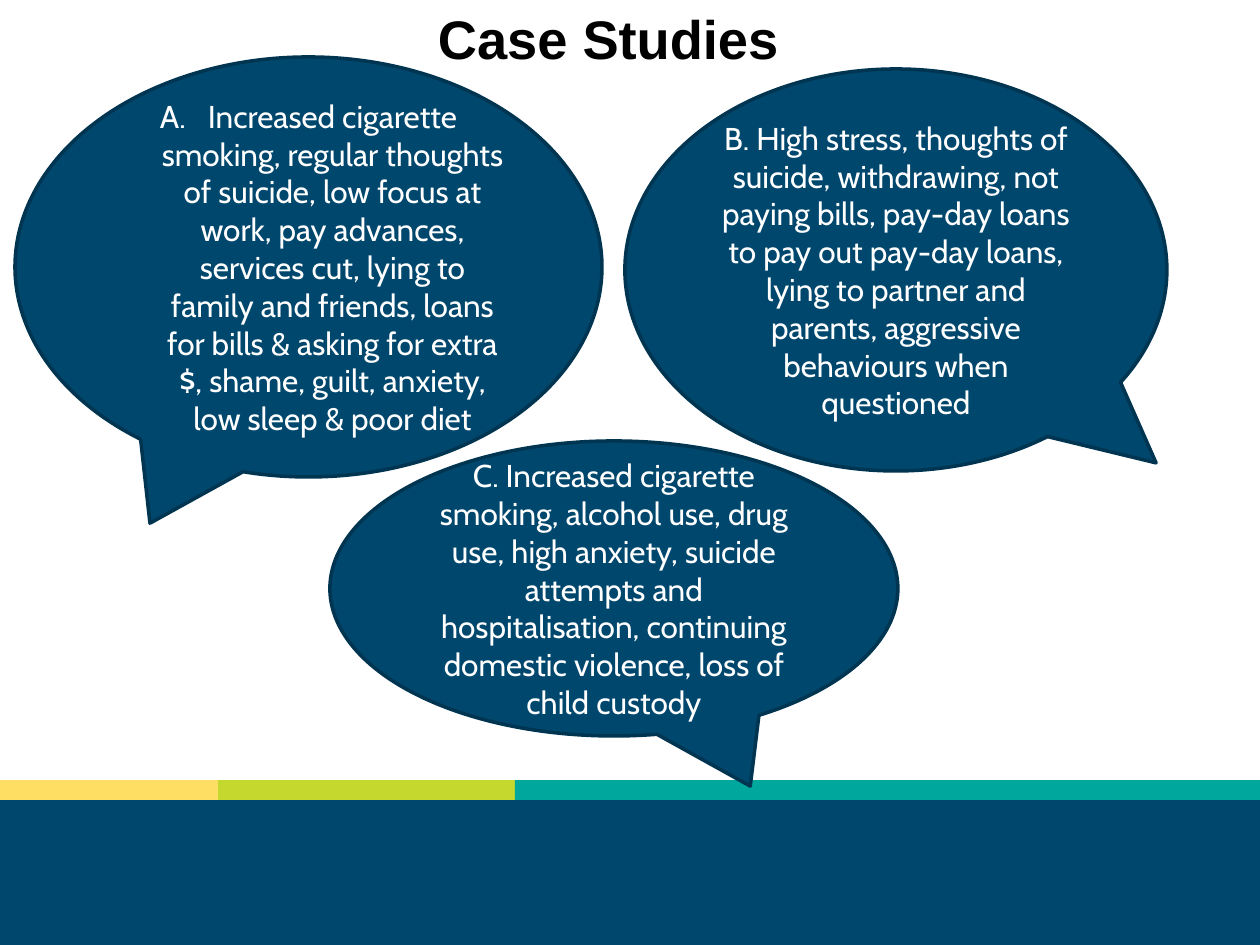
from dataclasses import dataclass

from lxml.etree import SubElement
from pptx import Presentation
from pptx.dml.color import RGBColor
from pptx.enum.shapes import MSO_SHAPE
from pptx.enum.text import MSO_ANCHOR, MSO_AUTO_SIZE, PP_ALIGN
from pptx.oxml.ns import qn
from pptx.util import Emu, Pt


@dataclass(frozen=True)
class Theme:
    navy: RGBColor = RGBColor.from_string("00476D")
    outline: RGBColor = RGBColor.from_string("003551")
    yellow: RGBColor = RGBColor.from_string("FFDF63")
    lime: RGBColor = RGBColor.from_string("C4D82E")
    teal: RGBColor = RGBColor.from_string("00A79D")
    white: RGBColor = RGBColor.from_string("FFFFFF")
    black: RGBColor = RGBColor.from_string("000000")
    title_font: str = "Arial"
    body_font: str = "Cabin"
    title_size: Pt = Pt(31)
    body_size: Pt = Pt(18)


theme = Theme()
PX_PER_INCH = 126
WIDTH, HEIGHT = 1260, 945


def px(length):
    return Emu(round(length * 914400 / PX_PER_INCH))


def add_filled(kind, left, top, width, height, color):
    shape = page.shapes.add_shape(kind, px(left), px(top), px(width), px(height))
    shape.shadow.inherit = False
    shape.fill.solid()
    shape.fill.fore_color.rgb = color
    shape.line.fill.background()
    return shape


deck = Presentation()
deck.slide_width, deck.slide_height = px(WIDTH), px(HEIGHT)
page = deck.slides.add_slide(deck.slide_layouts[5])

# Footer block with its coloured strip
add_filled(MSO_SHAPE.RECTANGLE, 0, 798, WIDTH, HEIGHT - 798, theme.navy)
left = 0
for right, color in ((218, theme.yellow), (515, theme.lime), (WIDTH, theme.teal)):
    add_filled(MSO_SHAPE.RECTANGLE, left, 780, right - left, 20, color)
    left = right

# Title
title = page.shapes.title
title.left, title.top, title.width, title.height = px(87), px(0), px(1042), px(74)
frame = title.text_frame
frame.text = "Case Studies"
frame.auto_size = MSO_AUTO_SIZE.NONE
frame.vertical_anchor = MSO_ANCHOR.TOP
frame.margin_left = frame.margin_right = px(9)
frame.margin_top = frame.margin_bottom = px(5)
heading = frame.paragraphs[0]
heading.alignment = PP_ALIGN.CENTER
heading.font.name = theme.title_font
heading.font.size = theme.title_size
heading.font.bold = True
heading.font.color.rgb = theme.black

# Case study callouts: box, pointer tip, lettered by list numbering, text
cases = (
    ((15, 57, 587, 420), (-0.27, 0.61), True,
     "Increased cigarette smoking, regular thoughts of suicide, low focus at work, "
     "pay advances, services cut, lying to family and friends, loans for bills & "
     "asking for extra $, shame, guilt, anxiety, low sleep & poor diet"),
    ((625, 69, 542, 402), (0.48, 0.48), False,
     "B. High stress, thoughts of suicide, withdrawing, not paying bills, pay-day "
     "loans to pay out pay-day loans, lying to partner and parents, aggressive "
     "behaviours when questioned"),
    ((330, 441, 568, 295), (0.24, 0.67), False,
     "C. Increased cigarette smoking, alcohol use, drug use, high anxiety, suicide "
     "attempts and hospitalisation, continuing domestic violence, loss of child "
     "custody"),
)
for box, tip, lettered, text in cases:
    callout = add_filled(MSO_SHAPE.OVAL_CALLOUT, *box, theme.navy)
    callout.adjustments[0], callout.adjustments[1] = tip
    callout.line.color.rgb = theme.outline
    callout.line.width = Pt(2)
    frame = callout.text_frame
    frame.word_wrap = True
    frame.vertical_anchor = MSO_ANCHOR.MIDDLE
    frame.text = text
    para = frame.paragraphs[0]
    para.alignment = PP_ALIGN.CENTER
    if lettered:
        properties = para._p.get_or_add_pPr()
        properties.set("marL", str(px(48)))
        properties.set("indent", str(-px(48)))
        SubElement(properties, qn("a:buAutoNum"), type="alphaUcPeriod")
    para.font.name = theme.body_font
    para.font.size = theme.body_size
    para.font.color.rgb = theme.white

deck.save("out.pptx")
